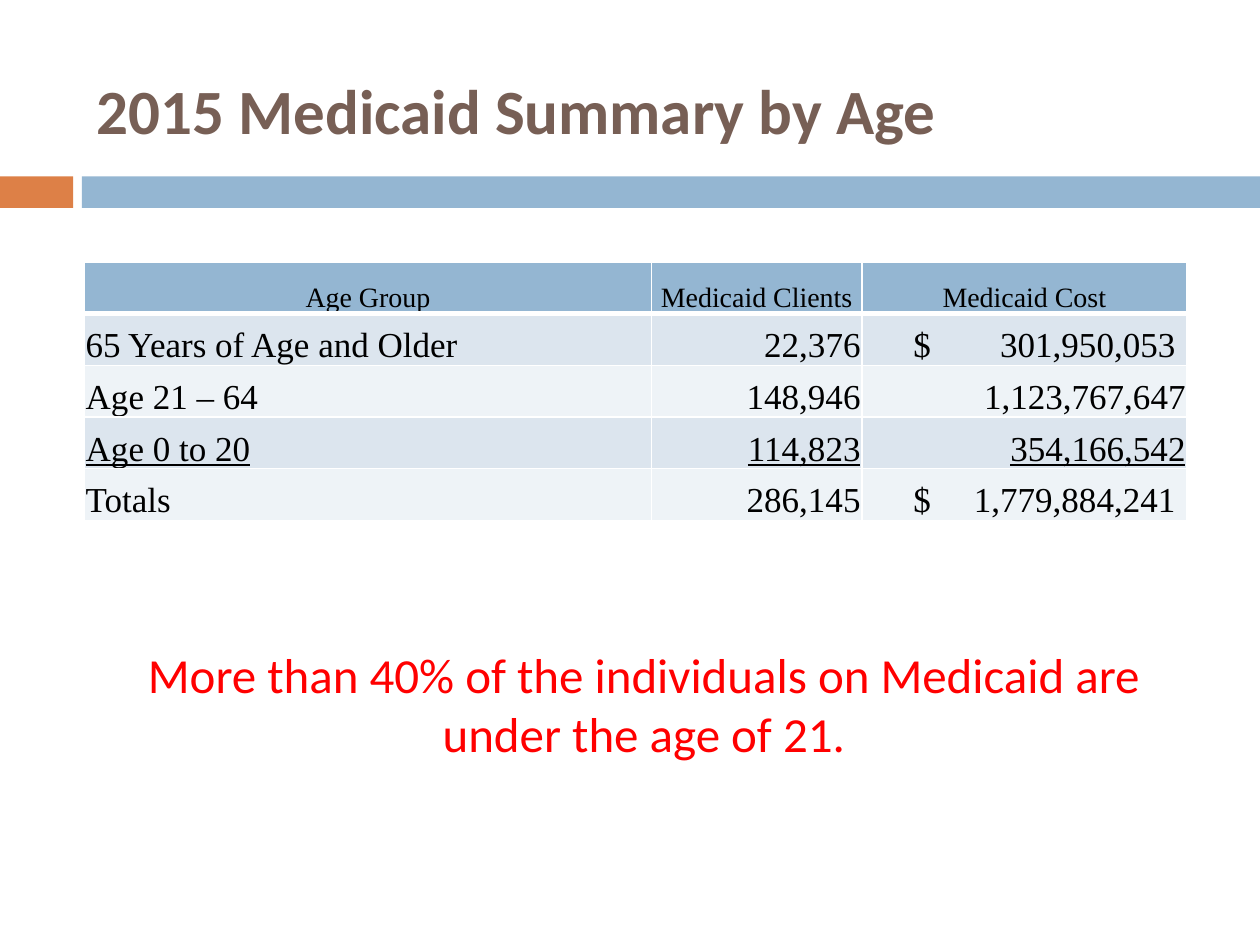
from lxml import etree
from pptx import Presentation
from pptx import util as u
from pptx.dml.color import RGBColor
from pptx.enum import shapes, text
from pptx.oxml.ns import qn

BLUE = RGBColor(0x94, 0xB6, 0xD2)
ORANGE = RGBColor(0xDD, 0x80, 0x47)
BROWN = RGBColor(0x77, 0x5F, 0x55)
RED = RGBColor(0xFF, 0x00, 0x00)
BLACK = RGBColor(0x00, 0x00, 0x00)
BANDS = [RGBColor(0xEE, 0xF3, 0xF7), RGBColor(0xDC, 0xE5, 0xEE)]
LEFT, CENTER, RIGHT = text.PP_ALIGN.LEFT, text.PP_ALIGN.CENTER, text.PP_ALIGN.RIGHT


def add_text(page, words, place, size, color, align, bold=False):
    box = page.shapes.add_textbox(*[u.Inches(v) for v in place])
    box.text_frame.word_wrap = True
    para = box.text_frame.paragraphs[0]
    para.text, para.alignment = words, align
    font = para.font
    font.name, font.size, font.bold = "Calibri", u.Pt(size), bold
    font.color.rgb = color
    return box


def add_borders(cell, widths):
    # Border lines must come before the fill in the cell properties
    properties = cell._tc.get_or_add_tcPr()
    for position, (side, width) in enumerate(widths.items()):
        line = etree.Element(qn("a:ln" + side), w=str(u.Pt(width)))
        fill = etree.SubElement(line, qn("a:solidFill"))
        etree.SubElement(fill, qn("a:srgbClr"), val="FFFFFF")
        properties.insert(position, line)


deck = Presentation()
deck.slide_width, deck.slide_height = u.Inches(10), u.Inches(7.5)
page = deck.slides.add_slide(deck.slide_layouts[6])

# Divider band
for left, width, color in [(0, 0.58, ORANGE), (0.65, 9.35, BLUE)]:
    bar = page.shapes.add_shape(shapes.MSO_SHAPE.RECTANGLE, u.Inches(left), u.Inches(1.4),
                                u.Inches(width), u.Inches(0.25))
    bar.shadow.inherit = False
    bar.fill.solid()
    bar.fill.fore_color.rgb = color
    bar.line.fill.background()

# Title
title = add_text(page, "2015 Medicaid Summary by Age", (0.67, 0.33, 8.92, 1.08),
                 36, BROWN, LEFT, bold=True)
title.text_frame.vertical_anchor = text.MSO_ANCHOR.MIDDLE

# Table of clients and cost by age group
rows = [
    ("Age Group", "Medicaid Clients", "Medicaid Cost"),
    ("65 Years of Age and Older", "22,376", "$\t301,950,053"),
    ("Age 21 – 64", "148,946", "1,123,767,647"),
    ("Age 0 to 20", "114,823", "354,166,542"),
    ("Totals", "286,145", "$\t1,779,884,241"),
]
table = page.shapes.add_table(len(rows), 3, u.Inches(0.67), u.Inches(2.08),
                              u.Inches(8.75), u.Inches(2.03)).table
for column, width in zip(table.columns, [4.5, 1.67, 2.58]):
    column.width = u.Inches(width)

for r, row in enumerate(rows):
    table.rows[r].height = u.Inches(0.41)
    for c, words in enumerate(row):
        cell = table.cell(r, c)
        cell.margin_left = cell.margin_right = cell.margin_top = u.Inches(0.01)
        cell.margin_bottom = 0
        cell.vertical_anchor = text.MSO_ANCHOR.BOTTOM
        cell.fill.solid()
        cell.fill.fore_color.rgb = BLUE if r == 0 else BANDS[r % 2]
        add_borders(cell, {"L": 1, "R": 1, "T": 3 if r == 1 else 1, "B": 3 if r == 0 else 1})

        para = cell.text_frame.paragraphs[0]
        para.text = words
        para.alignment = CENTER if r == 0 else RIGHT if c else LEFT
        font = para.font
        font.name, font.size = "Times New Roman", u.Pt(16 if r == 0 else 20)
        font.bold, font.underline = False, r == 3
        font.color.rgb = BLACK

        # Dollar sign on the left, amount on a right tab stop
        if "\t" in words:
            para.alignment = LEFT
            cell.margin_left = u.Inches(0.41)
            stops = etree.Element(qn("a:tabLst"))
            etree.SubElement(stops, qn("a:tab"), pos=str(u.Inches(2.08)), algn="r")
            para._p.get_or_add_pPr().insert(0, stops)

# Takeaway
add_text(page, "More than 40% of the individuals on Medicaid are under the age of 21.",
         (0.61, 5.07, 9, 1.04), 28, RED, CENTER)

deck.save("out.pptx")
